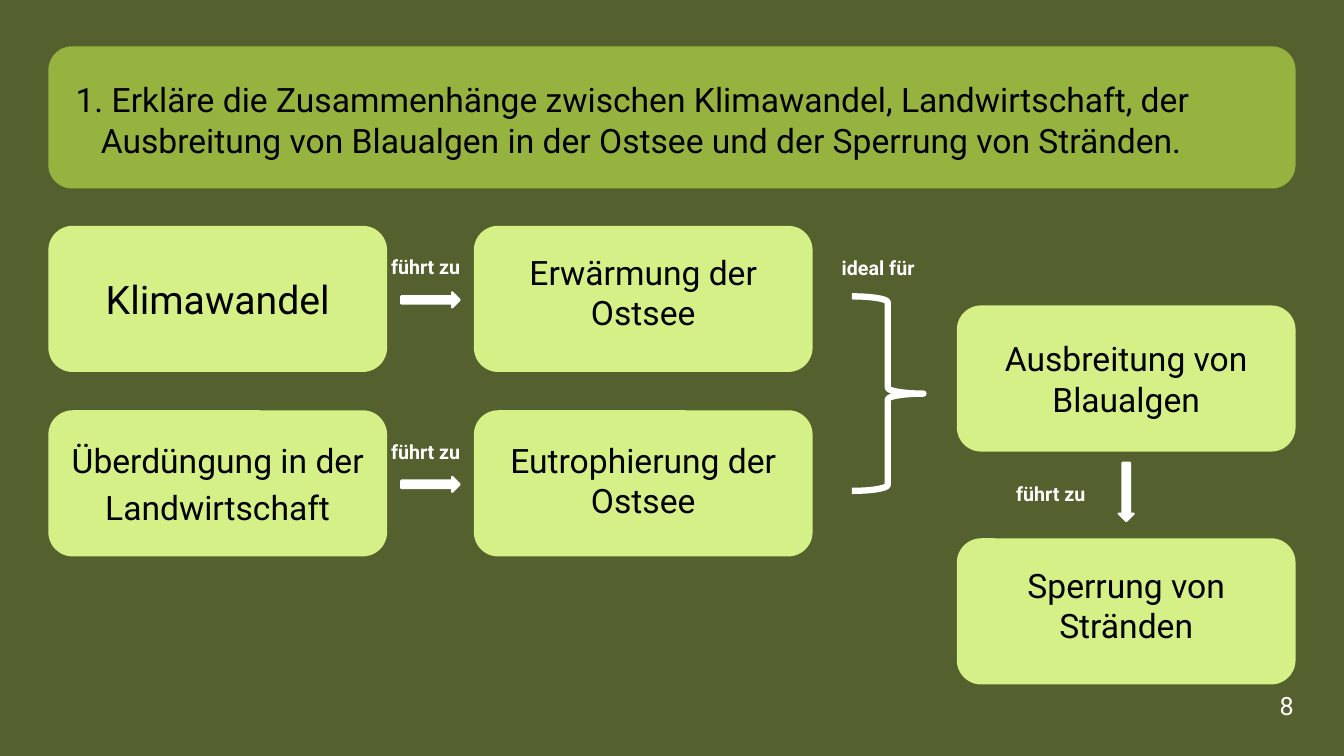
from pptx import Presentation
from pptx.dml.color import RGBColor
from pptx.enum.shapes import MSO_SHAPE as SHAPE
from pptx.enum.text import MSO_ANCHOR as ANCHOR, MSO_AUTO_SIZE as AUTO, PP_ALIGN as ALIGN
from pptx.util import Inches, Pt

FONT = "Roboto"
OLIVE, GREEN, LIME, WHITE, BLACK = "54612E", "96B340", "D5F086", "FFFFFF", "000000"
CARD_W, CARD_H = 3.36, 1.45
ARROW_W, ARROW_H = 0.58, 0.15
LEFT, MIDDLE, RIGHT = 0.48, 4.7, 9.49  # card columns


def rgb(color):
    return RGBColor.from_string(color)


def write(sp, text, size, color=BLACK, align=ALIGN.LEFT, bold=False, spacing=1.0, **frame):
    """Put one formatted paragraph into a shape."""
    tf = sp.text_frame
    settings = dict(word_wrap=True, auto_size=AUTO.NONE, vertical_anchor=ANCHOR.MIDDLE)
    for name, value in {**settings, **frame}.items():
        setattr(tf, name, value)
    p = tf.paragraphs[0]
    p.alignment, p.line_spacing = align, spacing
    r = p.add_run()
    r.text = text
    for name, value in dict(name=FONT, size=Pt(size), bold=bold).items():
        setattr(r.font, name, value)
    r.font.color.rgb = rgb(color)
    return p


def add_shape(s, kind, x, y, w, h, fill=None, line=None, width=0):
    sp = s.shapes.add_shape(kind, Inches(x), Inches(y), Inches(w), Inches(h))
    sp.shadow.inherit = False
    if fill:
        sp.fill.solid()
        sp.fill.fore_color.rgb = rgb(fill)
    else:
        sp.fill.background()
    if line:
        sp.line.color.rgb = rgb(line)
        sp.line.width = Pt(width)
    else:
        sp.line.fill.background()
    return sp


def add_label(s, text, x, y, w, h, size, **style):
    box = s.shapes.add_textbox(Inches(x), Inches(y), Inches(w), Inches(h))
    write(box, text, size, WHITE, **style)


def add_banner(s, x, y, w, h):
    """Task title on a rounded banner."""
    banner = add_shape(s, SHAPE.ROUNDED_RECTANGLE, x, y, w, h, GREEN)
    title = s.shapes.title
    box = dict(left=x + 0.17, top=y + 0.02, width=w - 0.46, height=h)
    for name, value in box.items():
        setattr(title, name, Inches(value))
    p = write(title, "1. Erkläre die Zusammenhänge zwischen Klimawandel, Landwirtschaft, der "
              "Ausbreitung von Blaualgen in der Ostsee und der Sperrung von Stränden.", 24)
    # Hanging indent for the second line
    pPr = p._p.get_or_add_pPr()
    pPr.set("marL", str(Inches(0.25)))
    pPr.set("indent", str(-Inches(0.25)))
    banner._element.addnext(title._element)


def add_card(s, text, x, y, size=24, lift=0, spacing=1.0):
    """Card with centred text, raised by lift inches."""
    card = add_shape(s, SHAPE.ROUNDED_RECTANGLE, x, y, CARD_W, CARD_H, LIME)
    write(card, text, size, align=ALIGN.CENTER, spacing=spacing,
          margin_left=Inches(0.03), margin_right=Inches(0.03),
          margin_top=Inches(0.05), margin_bottom=Inches(0.05 + 2 * lift))


def add_arrow(s, cx, cy, label_x, label_y, rotation=0):
    """Arrow centred on a point, with its label."""
    arrow = add_shape(s, SHAPE.RIGHT_ARROW, cx - ARROW_W / 2, cy - ARROW_H / 2,
                      ARROW_W, ARROW_H, WHITE, WHITE, 1.5)
    arrow.rotation = rotation
    add_label(s, "führt zu", label_x, label_y, 1.11, 0.34, 14, bold=True)


def add_causes(s, x, y, cause, effect):
    """Row of a cause card, an arrow and an effect card."""
    add_card(s, x=x, y=y, **cause)
    add_card(s, x=MIDDLE, y=y, **effect)
    add_arrow(s, (x + CARD_W + MIDDLE) / 2, y + CARD_H / 2 + 0.01, x + 3.3, y + 0.24)


def add_result(s, x, y):
    """Brace leading to the two result cards."""
    brace = add_shape(s, SHAPE.RIGHT_BRACE, 8.45, 2.94, 0.71, 1.93, line=WHITE, width=4.5)
    brace.adjustments[0] = 0.083
    add_label(s, "ideal für", 8.25, 2.49, 1.11, 0.34, 14, bold=True)
    add_card(s, "Ausbreitung von Blaualgen", x, y)
    add_card(s, "Sperrung von Stränden", x, y + 2.31, lift=0.06)
    add_arrow(s, x + CARD_W / 2, y + 1.85, x + 0.49, y + 1.7, rotation=90)


def build_slide(prs):
    s = prs.slides.add_slide(prs.slide_layouts[5])
    s.background.fill.solid()
    s.background.fill.fore_color.rgb = rgb(OLIVE)
    add_banner(s, LEFT, 0.46, 12.37, 1.41)
    add_causes(s, LEFT, 2.24, dict(text="Klimawandel", size=28),
               dict(text="Erwärmung der Ostsee", lift=0.07))
    add_causes(s, LEFT, 4.07,
               dict(text="Überdüngung in der Landwirtschaft", lift=0.03, spacing=1.17),
               dict(text="Eutrophierung der Ostsee", lift=0.03))
    add_result(s, RIGHT, 3.03)
    # Page number
    add_label(s, "8", 12.45, 6.79, 0.48, 0.41, 18, align=ALIGN.RIGHT)


def main():
    prs = Presentation()
    prs.slide_width, prs.slide_height = Inches(13.33), Inches(7.5)
    build_slide(prs)
    prs.save("out.pptx")


if __name__ == "__main__":
    main()
